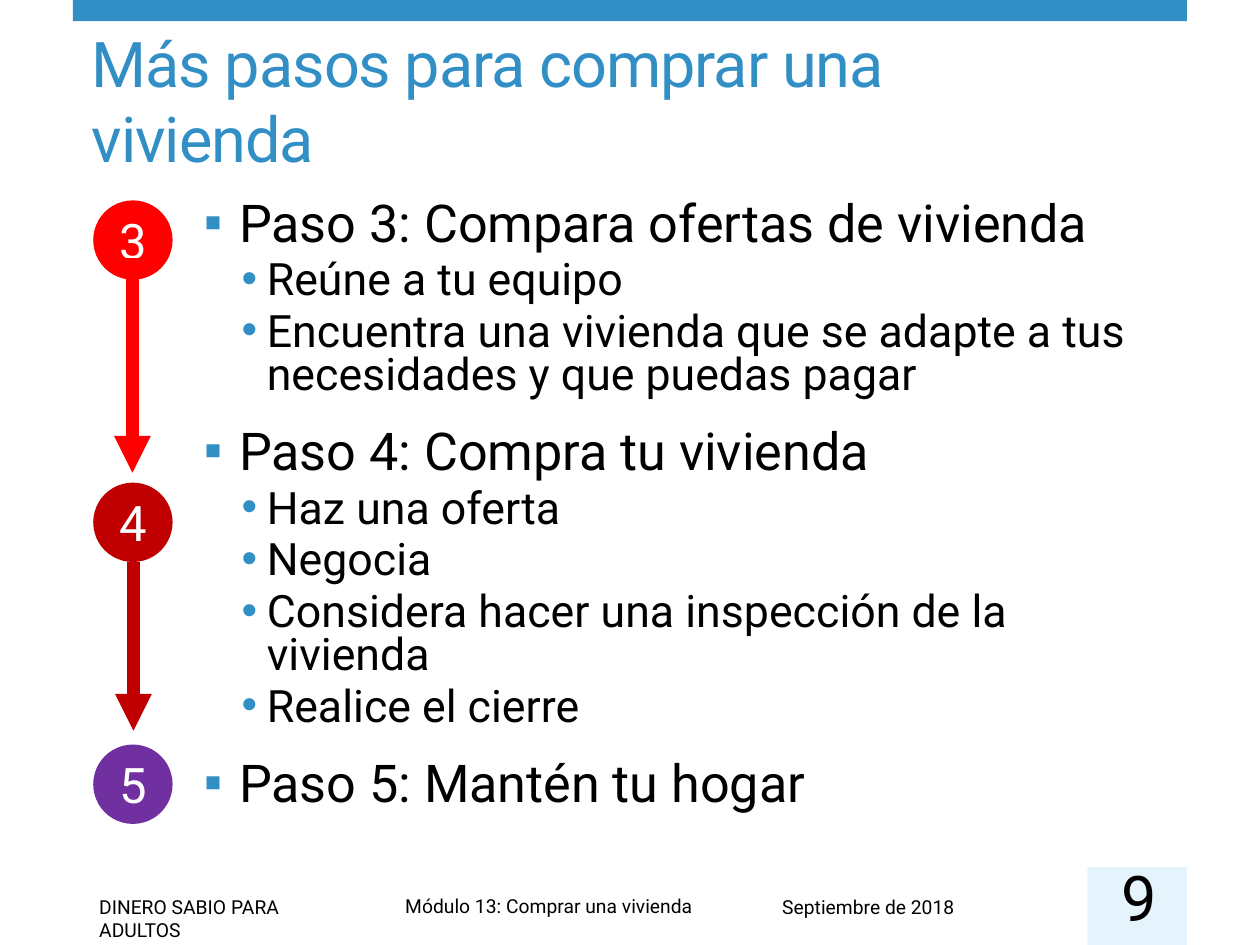
"""Build the slide with steps 3 to 5 of buying a home."""
from lxml.etree import SubElement as Sub
from pptx import Presentation
from pptx.dml.color import RGBColor
from pptx.enum.shapes import MSO_CONNECTOR as Link, MSO_SHAPE as Kind
from pptx.enum.text import MSO_ANCHOR as Anchor, PP_ALIGN as Align
from pptx.oxml.ns import qn
from pptx.util import Cm, Pt

FONT = "Roboto"
BLUE = RGBColor(0x31, 0x8F, 0xC5)
PALE = RGBColor(0xE4, 0xF3, 0xFC)
RED = RGBColor(0xFF, 0x00, 0x00)
DARK = RGBColor(0xC0, 0x00, 0x00)
PLUM = RGBColor(0x70, 0x30, 0xA0)
BLACK = RGBColor(0, 0, 0)
WHITE = RGBColor(0xFF, 0xFF, 0xFF)

TITLE = "Más pasos para comprar una vivienda"
STEPS = [
    ("Paso 3: Compara ofertas de vivienda", [
        "Reúne a tu equipo",
        "Encuentra una vivienda que se adapte a tus necesidades y que puedas pagar",
    ]),
    ("Paso 4: Compra tu vivienda", [
        "Haz una oferta",
        "Negocia",
        "Considera hacer una inspección de la vivienda",
        "Realice el cierre",
    ]),
    ("Paso 5: Mantén tu hogar", []),
]
BANDS = [
    ((1.47, 0, 22.46, 0.43), BLUE),
    ((21.92, 17.48, 2.01, 1.57), PALE),
]
FOOTER = [
    ("DINERO SABIO PARA ADULTOS", (1.75, 17.93, 5.66, 0.74)),
    ("Módulo 13: Comprar una vivienda", (7.92, 17.91, 14.38, 0.74)),
    ("Septiembre de 2018", (15.52, 17.93, 6.4, 0.74)),
]
MARKS = [("3", 4.04, RED), ("4", 9.73, DARK), ("5", 15.01, PLUM)]
ARROWS = [(2.67, 5.21, 9.53, RED), (2.69, 11.33, 14.73, DARK)]
LEFT, DISC = 1.88, 1.6
LEVELS = [("▪", 29.8, 0.71, 0.71, 6), ("•", 25.5, 1.27, 0.51, 5.1)]
GAP = 18.2


def style(para, size, color):
    for run in para.runs:
        font = run.font
        font.name, font.size = FONT, Pt(size)
        font.color.rgb = color


def shape(slide, kind, box, color):
    item = slide.shapes.add_shape(kind, *map(Cm, box))
    item.shadow.inherit = False
    item.fill.solid()
    item.fill.fore_color.rgb = color
    item.line.fill.background()
    return item


def label(slide, text, box, size, color):
    frame = slide.shapes.add_textbox(*map(Cm, box)).text_frame
    frame.word_wrap = True
    frame.text = text
    style(frame.paragraphs[0], size, color)
    return frame


def center(frame):
    frame.vertical_anchor = Anchor.MIDDLE
    frame.paragraphs[0].alignment = Align.CENTER


def arrow(slide, x, top, end, color):
    line = slide.shapes.add_connector(
        Link.STRAIGHT, Cm(x), Cm(top), Cm(x), Cm(end))
    line.line.color.rgb = color
    line.line.width = Pt(7)
    Sub(line.line._get_or_add_ln(), qn("a:tailEnd"), type="triangle")
    Sub(line._element.spPr, qn("a:effectLst"))


def bullet(para, text, level, before):
    sign, size, left, hang, _ = LEVELS[level]
    para.text = text
    para.level = level
    para.line_spacing = 0.8
    para.space_before = Pt(before)
    style(para, size, BLACK)
    props = para._p.get_or_add_pPr()
    props.set("marL", str(Cm(left)))
    props.set("indent", str(-Cm(hang)))
    Sub(Sub(props, qn("a:buClr")), qn("a:srgbClr"), val=str(BLUE))
    Sub(props, qn("a:buFont"), typeface="Arial")
    Sub(props, qn("a:buChar"), char=sign)


def body(slide):
    rows = []
    for step, (head, points) in enumerate(STEPS):
        rows.append((head, 0, GAP if step else LEVELS[0][4]))
        rows += [(point, 1, LEVELS[1][4]) for point in points]
    box = slide.shapes.add_textbox(*map(Cm, (3.86, 3.96, 19.58, 13.41)))
    frame = box.text_frame
    frame.word_wrap = True
    for num, row in enumerate(rows):
        para = frame.add_paragraph() if num else frame.paragraphs[0]
        bullet(para, *row)


def main():
    deck = Presentation()
    deck.slide_width, deck.slide_height = Cm(25.4), Cm(19.05)
    slide = deck.slides.add_slide(deck.slide_layouts[6])
    for box, color in BANDS:
        shape(slide, Kind.RECTANGLE, box, color)
    for text, box in FOOTER:
        label(slide, text, box, 11, BLACK)

    title = label(slide, TITLE, (1.6, 1.22, 20.83, 2.44), 36, BLUE)
    title.vertical_anchor = Anchor.BOTTOM
    title.paragraphs[0].runs[0]._r.get_or_add_rPr().set("spc", "-60")

    for num, (text, top, color) in enumerate(MARKS):
        disc = shape(slide, Kind.OVAL, (LEFT, top, DISC, DISC), color)
        disc.text_frame.text = text
        center(disc.text_frame)
        style(disc.text_frame.paragraphs[0], 28, WHITE)
        if num < len(ARROWS):
            arrow(slide, *ARROWS[num])
    body(slide)

    page = label(slide, "9", (21.97, 17.68, 1.98, 0.79), 36, BLACK)
    page.margin_left = page.margin_right = 0
    page.margin_top = page.margin_bottom = 0
    center(page)
    deck.save("out.pptx")


if __name__ == "__main__":
    main()
